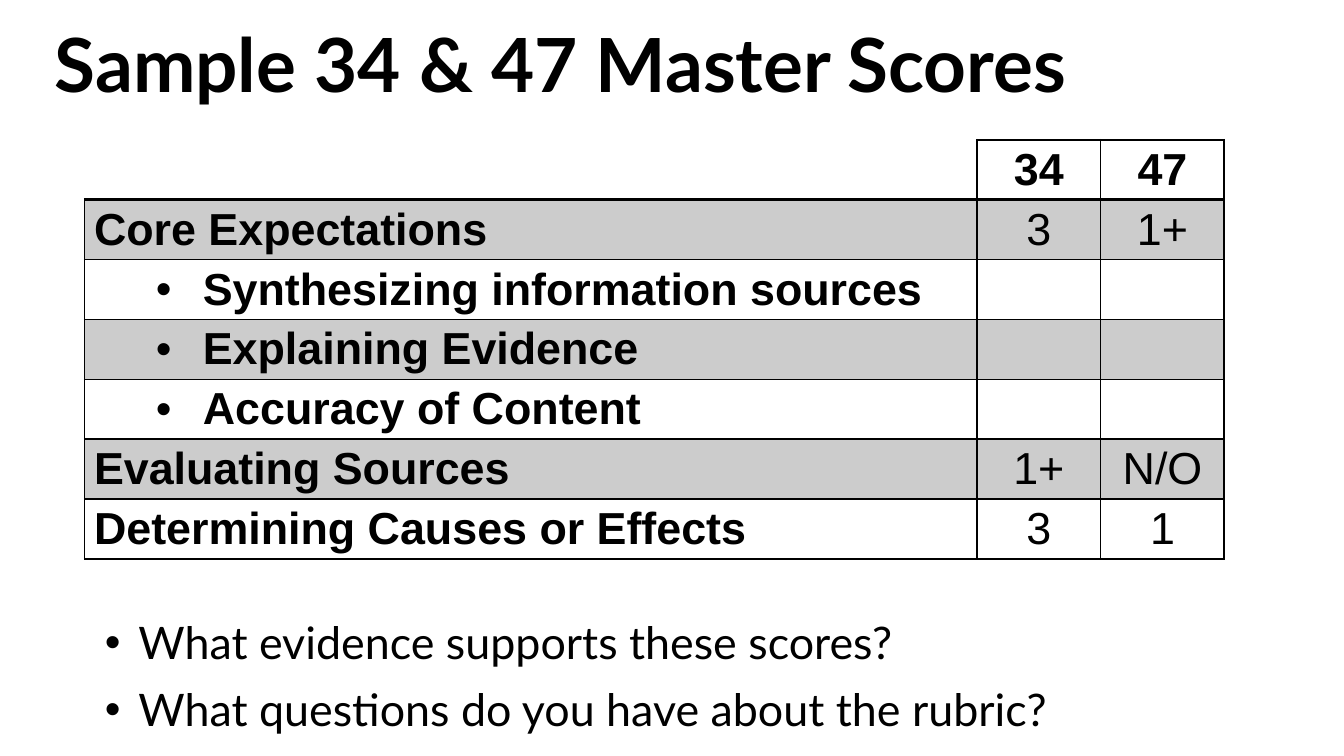
import dataclasses

import pptx
import pptx.dml.color
import pptx.enum.text
import pptx.oxml.ns
import pptx.util
from lxml import etree
from pptx.util import Inches


@dataclasses.dataclass(frozen=True)
class Theme:
    ink: str = "000000"
    band_alpha: int = 20
    heading_font: str = "Lato"
    table_font: str = "Arial"
    title_size: int = 40
    body_size: int = 24
    line: int = 1
    heavy_line: int = 2


THEME = Theme()
CENTER = pptx.enum.text.PP_ALIGN.CENTER
MIDDLE = pptx.enum.text.MSO_ANCHOR.MIDDLE

HEADER = ("", "34", "47")
SCORES = [
    ("Core Expectations", "3", "1+"),
    ("Synthesizing information sources", "", ""),
    ("Explaining Evidence", "", ""),
    ("Accuracy of Content", "", ""),
    ("Evaluating Sources", "1+", "N/O"),
    ("Determining Causes or Effects", "3", "1"),
]
SUBTOPIC_ROWS = (2, 3, 4)
QUESTIONS = [
    "What evidence supports these scores?",
    "What questions do you have about the rubric?",
]


def apply_format(target, values):
    for name, value in values.items():
        setattr(target, name, value)


def add_child(parent, tag, **attributes):
    return etree.SubElement(parent, pptx.oxml.ns.qn(tag), attributes)


def write_text(paragraph, text, font, size, bold=False):
    run = paragraph.add_run()
    run.text = text
    apply_format(run.font, {"name": font, "size": pptx.util.Pt(size), "bold": bold})
    run.font.color.rgb = pptx.dml.color.RGBColor.from_string(THEME.ink)


def add_bullet(paragraph, left, hanging):
    properties = paragraph._p.get_or_add_pPr()
    properties.set("marL", str(Inches(left)))
    properties.set("indent", str(-Inches(hanging)))
    color = add_child(properties, "a:buClr")
    add_child(color, "a:srgbClr", val=THEME.ink)
    add_child(properties, "a:buFont", typeface="Arial")
    add_child(properties, "a:buChar", char="•")


def set_margins(target, side, edge):
    apply_format(target, {
        "margin_left": Inches(side),
        "margin_right": Inches(side),
        "margin_top": Inches(edge),
        "margin_bottom": Inches(edge),
    })


def add_text_frame(slide, left, top, width, height, side, edge):
    box = slide.shapes.add_textbox(Inches(left), Inches(top), Inches(width), Inches(height))
    box.text_frame.word_wrap = True
    set_margins(box.text_frame, side, edge)
    return box.text_frame


def add_title(slide, text):
    frame = add_text_frame(slide, 0.31, 0, 9.2, 0.93, 0.1, 0.05)
    frame.vertical_anchor = MIDDLE
    write_text(frame.paragraphs[0], text, THEME.heading_font, THEME.title_size, True)


def add_questions(slide, questions):
    frame = add_text_frame(slide, 0.71, 4.58, 8.58, 1.02, 0.07, 0.04)
    for index, question in enumerate(questions):
        paragraph = frame.add_paragraph() if index else frame.paragraphs[0]
        apply_format(paragraph, {
            "line_spacing": 0.9,
            "space_before": pptx.util.Pt(10 if index else 0),
        })
        add_bullet(paragraph, 0.25, 0.25)
        write_text(paragraph, question, THEME.heading_font, THEME.body_size)


def set_borders(cell, widths):
    properties = cell._tc.get_or_add_tcPr()
    for side in "LRTB":
        width = widths[side]
        line = add_child(properties, f"a:ln{side}", w=str(pptx.util.Pt(width)))
        if width:
            fill = add_child(line, "a:solidFill")
            add_child(fill, "a:srgbClr", val=THEME.ink)
        else:
            add_child(line, "a:noFill")


def fill_cell(cell, banded):
    if not banded:
        cell.fill.background()
        return
    cell.fill.solid()
    cell.fill.fore_color.rgb = pptx.dml.color.RGBColor.from_string(THEME.ink)
    fill = cell._tc.tcPr.find(pptx.oxml.ns.qn("a:solidFill"))
    add_child(fill[0], "a:alpha", val=str(THEME.band_alpha * 1000))


def format_cell(cell, row, column, text):
    corner = row == 0 and column == 0
    set_borders(cell, {
        "L": 0 if corner else THEME.line,
        "R": THEME.line,
        "T": 0 if corner else THEME.heavy_line if row == 1 else THEME.line,
        "B": THEME.heavy_line if row == 0 else THEME.line,
    })
    fill_cell(cell, row % 2 == 1)
    set_margins(cell, 0.07, 0.02)
    cell.vertical_anchor = MIDDLE
    if not text:
        return
    paragraph = cell.text_frame.paragraphs[0]
    if column:
        paragraph.alignment = CENTER
    elif row in SUBTOPIC_ROWS:
        paragraph.level = 1
        add_bullet(paragraph, 0.81, 0.35)
    bold = row == 0 or column == 0
    write_text(paragraph, text, THEME.table_font, THEME.body_size, bold)


def add_score_table(slide, rows):
    widths = (6.64, 0.92, 0.92)
    height = Inches(3.12)
    frame = slide.shapes.add_table(
        len(rows), len(widths), Inches(0.63), Inches(1.04), Inches(sum(widths)), height)
    table = frame.table
    apply_format(table, {"first_row": False, "horz_banding": False})
    for column, width in zip(table.columns, widths):
        column.width = Inches(width)
    for row_index, texts in enumerate(rows):
        table.rows[row_index].height = height // len(rows)
        for column_index, text in enumerate(texts):
            format_cell(table.cell(row_index, column_index), row_index, column_index, text)


def main():
    presentation = pptx.Presentation()
    width = Inches(10)
    apply_format(presentation, {"slide_width": width, "slide_height": width * 9 // 16})
    slide = presentation.slides.add_slide(presentation.slide_layouts[6])
    add_title(slide, "Sample 34 & 47 Master Scores")
    add_questions(slide, QUESTIONS)
    add_score_table(slide, [HEADER, *SCORES])
    presentation.save("out.pptx")


if __name__ == "__main__":
    main()
